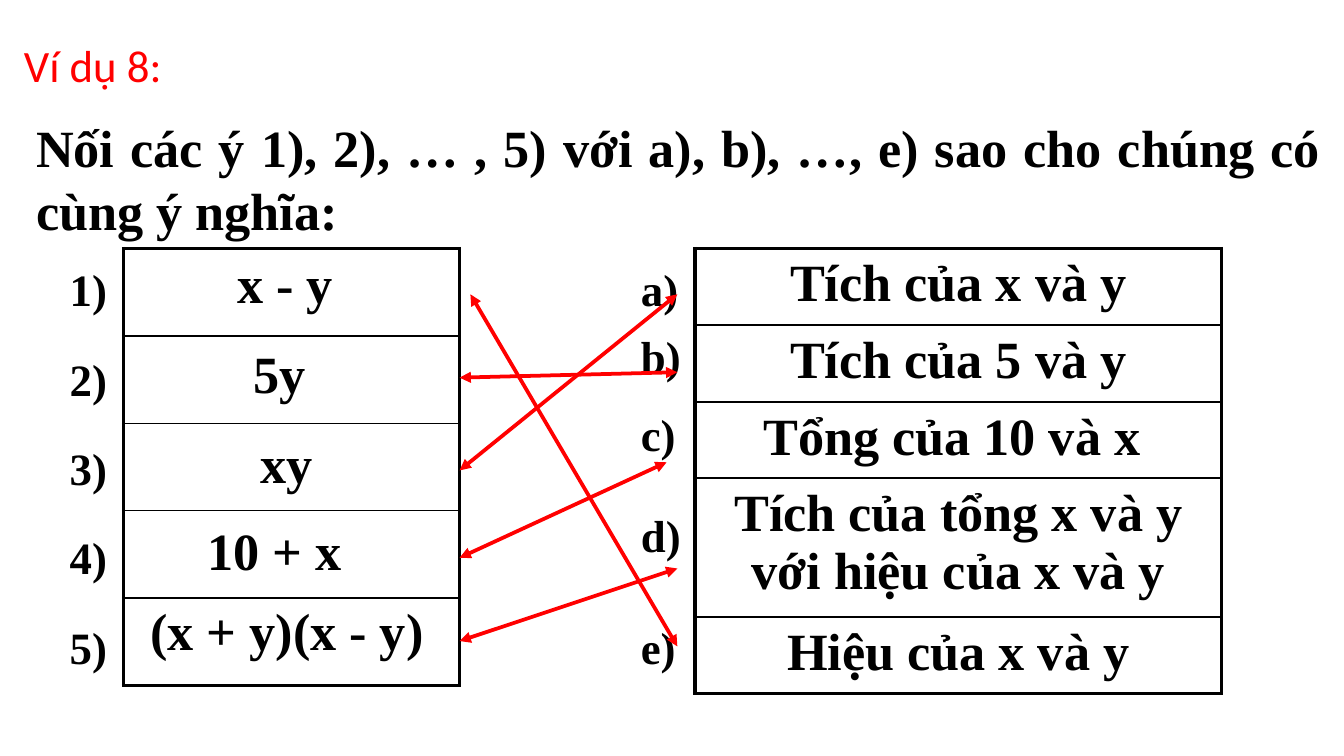
from dataclasses import dataclass

from lxml import etree
from pptx import Presentation
from pptx.dml.color import RGBColor
from pptx.enum.shapes import MSO_CONNECTOR, MSO_SHAPE
from pptx.enum.text import MSO_ANCHOR, MSO_AUTO_SIZE, PP_ALIGN
from pptx.oxml.ns import qn
from pptx.util import Inches, Pt

BLACK, RED = "000000", "FF0000"
LEFT, CENTER, JUSTIFY = PP_ALIGN.LEFT, PP_ALIGN.CENTER, PP_ALIGN.JUSTIFY
ELLIPSE, STRAIGHT = MSO_SHAPE.OVAL, MSO_CONNECTOR.STRAIGHT
MIDDLE = MSO_ANCHOR.MIDDLE
GROW = MSO_AUTO_SIZE.SHAPE_TO_FIT_TEXT
SERIF = "Times New Roman"
THICK, THIN = 2.25, 1


@dataclass
class Label:
    text: str
    left: float
    top: float
    width: float
    height: float
    align: PP_ALIGN = JUSTIFY
    size: int = 28
    color: str = BLACK
    font: str = SERIF
    bold: bool = True
    wrap: bool = False
    oval: bool = False


@dataclass
class Grid:
    left: float
    top: float
    width: float
    heights: list[float]
    texts: list[str]


@dataclass
class Match:
    start: tuple[float, float]
    end: tuple[float, float]


def rgb(color: str) -> RGBColor:
    return RGBColor.from_string(color)


def write(para, text: str, align: PP_ALIGN, size: int = 28, color: str = BLACK,
          font: str = SERIF, bold: bool = True) -> None:
    para.alignment = align
    span = para.add_run()
    span.text = text
    for name, value in {"size": Pt(size), "name": font, "bold": bold}.items():
        setattr(span.font, name, value)
    span.font.color.rgb = rgb(color)


def draw_label(page, label: Label) -> None:
    place = [Inches(v) for v in (label.left, label.top, label.width, label.height)]
    if label.oval:
        box = page.shapes.add_shape(ELLIPSE, *place)
        box.shadow.inherit = False
        box.fill.background()
        box.line.fill.background()
        box.text_frame.vertical_anchor = MIDDLE
    else:
        box = page.shapes.add_textbox(*place)
        box.text_frame.auto_size = GROW
    box.text_frame.word_wrap = label.wrap
    write(box.text_frame.paragraphs[0], label.text, label.align, label.size,
          label.color, label.font, label.bold)


def set_borders(cell, widths: dict[str, float]) -> None:
    """Give the cell black borders; widths maps L, R, T and B to points."""
    properties = cell._tc.get_or_add_tcPr()
    for side, width in widths.items():
        line = etree.SubElement(properties, qn(f"a:ln{side}"), w=str(Pt(width)))
        fill = etree.SubElement(line, qn("a:solidFill"))
        etree.SubElement(fill, qn("a:srgbClr"), val=BLACK)


def draw_grid(page, grid: Grid) -> None:
    count = len(grid.heights)
    table = page.shapes.add_table(
        count, 1, Inches(grid.left), Inches(grid.top),
        Inches(grid.width), Inches(sum(grid.heights))).table
    table.first_row = table.horz_banding = False
    for index, height in enumerate(grid.heights):
        table.rows[index].height = Inches(height)
        cell = table.cell(index, 0)
        set_borders(cell, {
            "L": THICK, "R": THICK,
            "T": THICK if index == 0 else THIN,
            "B": THICK if index == count - 1 else THIN})
        cell.fill.background()
        if grid.texts:
            write(cell.text_frame.paragraphs[0], grid.texts[index], CENTER)


def draw_match(page, match: Match) -> None:
    """Draw a red line with an arrowhead at both ends."""
    points = [Inches(v) for v in (*match.start, *match.end)]
    arrow = page.shapes.add_connector(STRAIGHT, *points)
    arrow.line.color.rgb = rgb(RED)
    arrow.line.width = Pt(2)
    line = arrow.line._get_or_add_ln()
    for end in ("headEnd", "tailEnd"):
        etree.SubElement(line, qn(f"a:{end}"), type="triangle")
    etree.SubElement(arrow._element.spPr, qn("a:effectLst"))


HEADINGS = [
    Label("Ví dụ 8:", 0.08, 0.23, 1.23, 0.5, LEFT, 24, RED, "Calibri", False),
    Label("Nối các ý 1), 2), … , 5) với a), b), …, e) sao cho chúng có cùng ý nghĩa:",
          0.17, 0.81, 9.75, 1.04, wrap=True),
]
GRIDS = [
    Grid(0.92, 1.85, 2.5, [0.65] * 5, []),
    Grid(5.17, 1.85, 3.92, [0.57, 0.57, 0.56, 1.03, 0.57], [
        "Tích của x và y", "Tích của 5 và y", "Tổng của 10 và x ",
        "Tích của tổng x và y với hiệu của x và y", "Hiệu của x và y"]),
]
NUMBERS = [(f"{i + 1})", 0.42, 1.9 + 0.665 * i) for i in range(5)]
LETTERS = [(f"{letter})", 4.67, top)
           for letter, top in zip("abcde", (1.9, 2.4, 2.98, 3.73, 4.56))]
MARKERS = [Label(text, left, top, 0.58, 0.5, size=24, wrap=True)
           for text, left, top in NUMBERS + LETTERS]
EXPRESSIONS = [
    Label("x - y", 1.37, 1.81, 1.5, 0.58, CENTER, oval=True),
    Label("5y", 1.33, 2.48, 1.5, 0.58, CENTER, oval=True),
    Label("xy", 1.43, 3.15, 1.4, 0.58, CENTER, oval=True),
    Label("10 + x", 1.44, 3.81, 1.21, 0.57, CENTER),
    Label("(x + y)(x - y)", 1.02, 4.4, 2.26, 0.57),
]
MATCHES = [
    Match((3.5, 2.19), (5.04, 4.81)),
    Match((3.42, 2.81), (5.04, 2.77)),
    Match((3.42, 3.5), (5.04, 2.19)),
    Match((3.42, 4.15), (4.96, 3.44)),
    Match((3.42, 4.77), (5.04, 4.23)),
]


def main() -> None:
    deck = Presentation()
    deck.slide_width = Inches(10)
    deck.slide_height = deck.slide_width * 9 // 16
    page = deck.slides.add_slide(deck.slide_layouts[6])
    for label in HEADINGS:
        draw_label(page, label)
    for grid in GRIDS:
        draw_grid(page, grid)
    for label in MARKERS + EXPRESSIONS:
        draw_label(page, label)
    for match in MATCHES:
        draw_match(page, match)
    deck.save("out.pptx")


if __name__ == "__main__":
    main()
